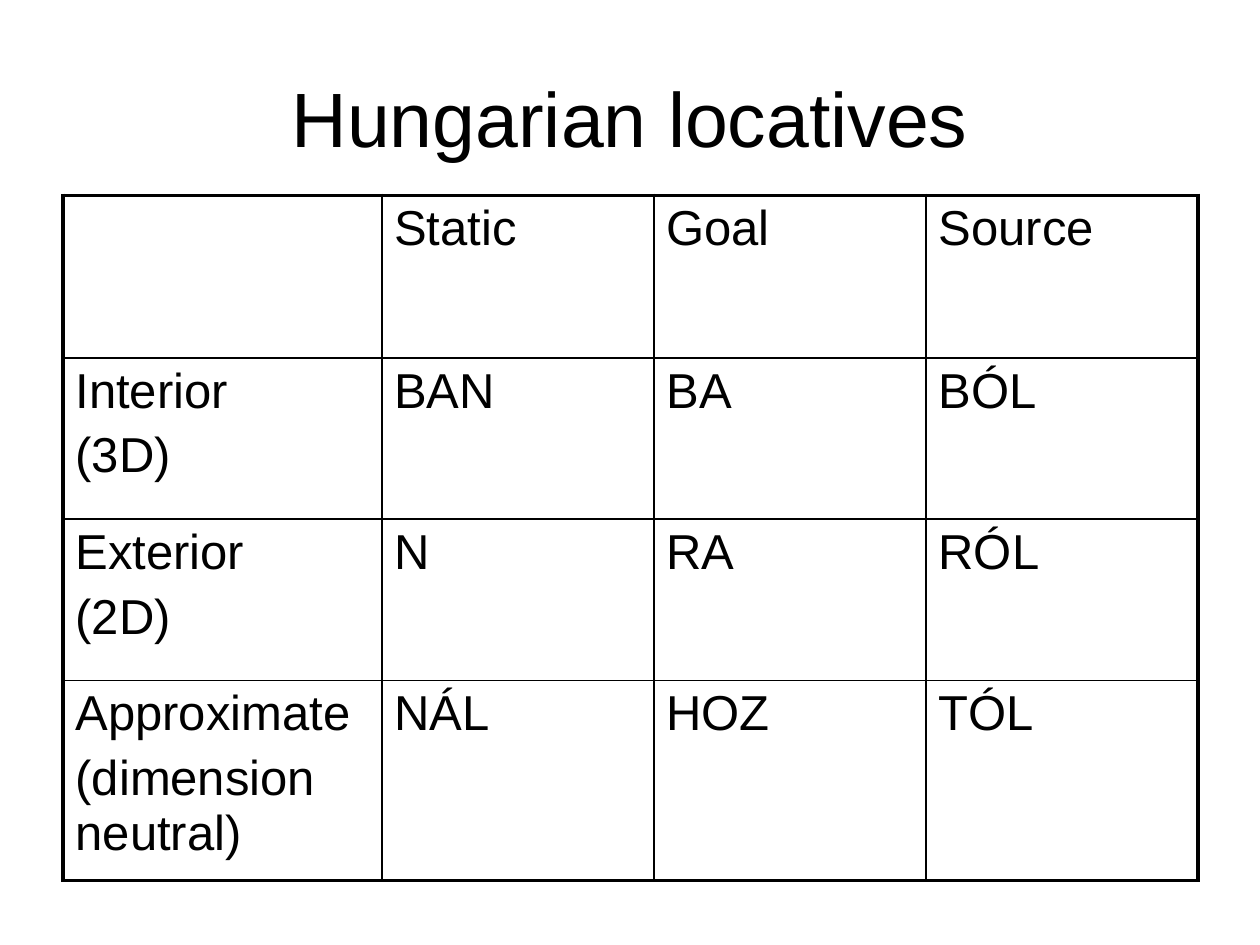
"""Build a slide with a table of Hungarian locative suffixes."""
from lxml import etree
from pptx import Presentation
from pptx import util as u
from pptx.dml.color import RGBColor
from pptx.enum import text
from pptx.oxml.ns import qn

TITLE = "Hungarian locatives"
ROWS = [
    ["", "Static", "Goal", "Source"],
    ["Interior\n(3D)", "BAN", "BA", "BÓL"],
    ["Exterior\n(2D)", "N", "RA", "RÓL"],
    ["Approximate\n(dimension neutral)", "NÁL", "HOZ", "TÓL"],
]
COLUMN_WIDTHS = [2.53, 2.16, 2.16, 2.16]
ROW_HEIGHTS = [1.29, 1.28, 1.28, 1.59]
THEME = {
    "font": "Arial", "ink": "000000", "title_size": 44, "cell_size": 28,
    "space_before": 0.2, "outer_line": 2.25, "inner_line": 1,
}


def format_font(font, size):
    values = {"name": THEME["font"], "size": u.Pt(size), "bold": False}
    for name, value in values.items():
        setattr(font, name, value)
    font.color.rgb = RGBColor.from_string(THEME["ink"])


def add_title(slide):
    title = slide.shapes.title
    box = {"left": 0.5, "top": 0.3, "width": 9, "height": 1.25}
    for name, value in box.items():
        setattr(title, name, u.Inches(value))
    frame = title.text_frame
    frame.text = TITLE
    frame.vertical_anchor = text.MSO_ANCHOR.MIDDLE
    paragraph = frame.paragraphs[0]
    paragraph.alignment = text.PP_ALIGN.CENTER
    format_font(paragraph.runs[0].font, THEME["title_size"])


def set_borders(cell, outer_edges):
    properties = cell._tc.get_or_add_tcPr()
    for index, (edge, is_outer) in enumerate(outer_edges.items()):
        width = THEME["outer_line" if is_outer else "inner_line"]
        line = etree.Element(qn(f"a:ln{edge}"), w=str(u.Pt(width)))
        fill = etree.SubElement(line, qn("a:solidFill"))
        etree.SubElement(fill, qn("a:srgbClr"), val=THEME["ink"])
        properties.insert(index, line)


def fill_cell(cell, content):
    margins = {"margin_left": 0.1, "margin_right": 0.1,
               "margin_top": 0.05, "margin_bottom": 0.05}
    for name, value in margins.items():
        setattr(cell, name, u.Inches(value))
    cell.fill.background()
    cell.text_frame.text = content
    for paragraph in cell.text_frame.paragraphs:
        paragraph.space_before = u.Pt(THEME["cell_size"] * THEME["space_before"])
        format_font(paragraph.font, THEME["cell_size"])
        for run in paragraph.runs:
            format_font(run.font, THEME["cell_size"])


def add_locative_table(slide):
    last_row, last_column = len(ROWS) - 1, len(COLUMN_WIDTHS) - 1
    table = slide.shapes.add_table(
        len(ROWS), len(COLUMN_WIDTHS), u.Inches(0.5), u.Inches(1.55),
        u.Inches(sum(COLUMN_WIDTHS)), u.Inches(sum(ROW_HEIGHTS))).table
    table.first_row = table.horz_banding = False
    for column, width in zip(table.columns, COLUMN_WIDTHS):
        column.width = u.Inches(width)
    for row, height in zip(table.rows, ROW_HEIGHTS):
        row.height = u.Inches(height)
    for r, contents in enumerate(ROWS):
        for c, content in enumerate(contents):
            cell = table.cell(r, c)
            fill_cell(cell, content)
            set_borders(cell, {"L": c == 0, "R": c == last_column,
                               "T": r == 0, "B": r == last_row})


def main():
    presentation = Presentation()
    presentation.slide_width = u.Inches(10)
    presentation.slide_height = u.Inches(7.5)
    slide = presentation.slides.add_slide(presentation.slide_layouts[5])
    add_title(slide)
    add_locative_table(slide)
    presentation.save("out.pptx")


if __name__ == "__main__":
    main()
